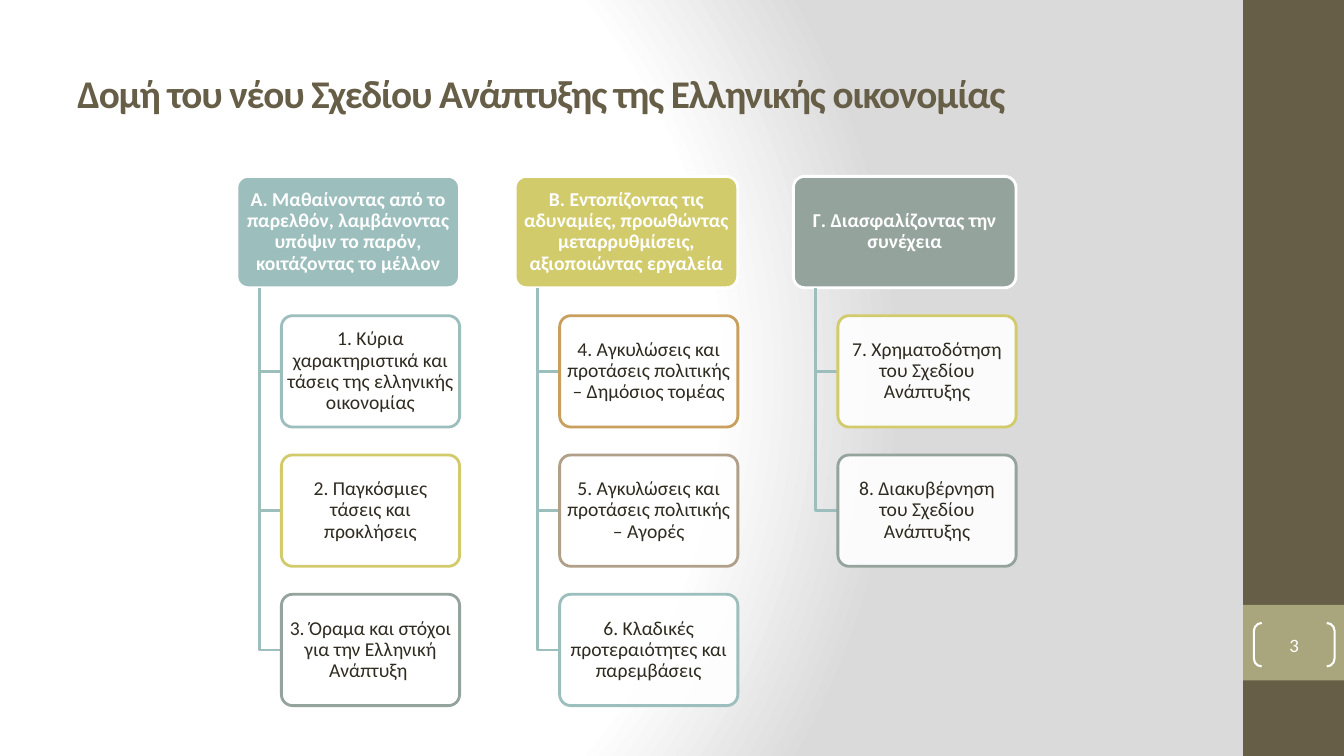
import pptx
import pptx.util
import pptx.oxml
import pptx.oxml.ns
from pptx.dml.color import RGBColor
from pptx.enum.shapes import MSO_SHAPE
from pptx.enum.text import MSO_ANCHOR, MSO_AUTO_SIZE, PP_ALIGN
from pptx.util import Pt

WHITE = RGBColor(0xFF, 0xFF, 0xFF)
INK = RGBColor(0x2F, 0x2B, 0x20)
BROWN = RGBColor(0x67, 0x5E, 0x47)
KHAKI = RGBColor(0xA9, 0xA5, 0x7C)
TEAL = RGBColor(0x9C, 0xBE, 0xBD)
LIME = RGBColor(0xD2, 0xCB, 0x6C)
SAGE = RGBColor(0x95, 0xA3, 0x9D)
OCHRE = RGBColor(0xC8, 0x9F, 0x5D)
TAUPE = RGBColor(0xB1, 0xA0, 0x89)

# Card grid, in points
LEFT, TOP = 169.2, 126
COL_STEP, ROW_STEP = 198.75, 99.5
HEAD_W, CARD_W, CARD_H = 159, 127.3, 79.5
TRUNK_DX, CARD_DX = 15.9, 31.8

COLUMNS = [
    ("Α. Μαθαίνοντας από το παρελθόν, λαμβάνοντας υπόψιν το παρόν, "
     "κοιτάζοντας το μέλλον", TEAL, [
         ("1. Κύρια χαρακτηριστικά και τάσεις της ελληνικής οικονομίας", TEAL),
         ("2. Παγκόσμιες τάσεις και προκλήσεις", LIME),
         ("3. Όραμα και στόχοι για την Ελληνική Ανάπτυξη ", SAGE)]),
    ("Β. Εντοπίζοντας τις αδυναμίες, προωθώντας μεταρρυθμίσεις, "
     "αξιοποιώντας εργαλεία", LIME, [
         ("4. Αγκυλώσεις και προτάσεις πολιτικής – Δημόσιος τομέας", OCHRE),
         ("5. Αγκυλώσεις και προτάσεις πολιτικής – Αγορές", TAUPE),
         ("6. Κλαδικές προτεραιότητες και παρεμβάσεις", TEAL)]),
    ("Γ. Διασφαλίζοντας την συνέχεια", SAGE, [
        ("7. Χρηματοδότηση του Σχεδίου Ανάπτυξης", LIME),
        ("8. Διακυβέρνηση του Σχεδίου Ανάπτυξης", SAGE)]),
]


class Deck:
    font = "Calibri"
    line_width = 2

    def __init__(self, prs):
        self.s = prs.slides.add_slide(prs.slide_layouts[5])

    def background(self):
        fill = self.s.background.fill
        fill.solid()
        solid = self.s.element.xpath(".//p:bgPr/a:solidFill")[0]
        stops = "".join(
            f'<a:gs pos="{pos}"><a:srgbClr val="{color}"/></a:gs>'
            for pos, color in ((0, "FFFFFF"), (75000, "FFFFFF"), (100000, "DADADA")))
        grad = pptx.oxml.parse_xml(
            f'<a:gradFill {pptx.oxml.ns.nsdecls("a")} rotWithShape="1">'
            f'<a:gsLst>{stops}</a:gsLst><a:path path="circle">'
            '<a:fillToRect l="20000" t="50000" r="100000" b="50000"/>'
            '</a:path></a:gradFill>')
        solid.getparent().replace(solid, grad)

    def style_text(self, tf, text, size, color, bold=False, align=PP_ALIGN.CENTER):
        tf.text = text
        tf.word_wrap = True
        tf.auto_size = MSO_AUTO_SIZE.NONE
        tf.vertical_anchor = MSO_ANCHOR.MIDDLE
        p = tf.paragraphs[0]
        p.alignment = align
        p.font.name, p.font.size, p.font.bold = self.font, Pt(size), bold
        p.font.color.rgb = color
        return p

    def title(self, text, x, y, w, h):
        sp = self.s.shapes.title
        sp.left, sp.top, sp.width, sp.height = Pt(x), Pt(y), Pt(w), Pt(h)
        p = self.style_text(sp.text_frame, text, 28, BROWN, True, PP_ALIGN.LEFT)
        p.runs[0].font._element.set("spc", "-80")

    def shape(self, kind, x, y, w, h, fill=None, line=None, width=line_width):
        sp = self.s.shapes.add_shape(kind, Pt(x), Pt(y), Pt(w), Pt(h))
        sp.shadow.inherit = False
        self.paint(sp, fill, line, width)
        return sp

    def paint(self, sp, fill, line, width):
        if fill is None:
            sp.fill.background()
        else:
            sp.fill.solid()
            sp.fill.fore_color.rgb = fill
        if line is None:
            sp.line.fill.background()
        else:
            sp.line.color.rgb = line
            sp.line.width = Pt(width)

    def card(self, text, x, y, w, fill, line, color, bold=False):
        sp = self.shape(MSO_SHAPE.ROUNDED_RECTANGLE, x, y, w, CARD_H, fill, line)
        sp.adjustments[0] = 0.1
        tf = sp.text_frame
        tf.margin_left = tf.margin_right = Pt(2.1)
        tf.margin_top = tf.margin_bottom = Pt(1.4)
        self.style_text(tf, text, 14, color, bold).line_spacing = 0.9
        return sp

    def translucent(self, sp, percent):
        clr = sp._element.spPr.xpath("a:solidFill/a:srgbClr")[0]
        alpha = pptx.oxml.parse_xml(
            f'<a:alpha {pptx.oxml.ns.nsdecls("a")} val="{percent * 1000}"/>')
        clr.append(alpha)

    def branch(self, x, y, x2, y2):
        fb = self.s.shapes.build_freeform(Pt(x), Pt(y))
        fb.add_line_segments([(Pt(x), Pt(y2)), (Pt(x2), Pt(y2))], close=False)
        sp = fb.convert_to_shape()
        sp.shadow.inherit = False
        self.paint(sp, None, TEAL, self.line_width)

    def page_number(self, text, x, y, w, h):
        sp = self.shape(MSO_SHAPE.DOUBLE_BRACKET, x, y, w, h, line=WHITE, width=1.5)
        sp.adjustments[0] = 0.18
        tf = sp.text_frame
        tf.margin_left = tf.margin_right = tf.margin_top = tf.margin_bottom = 0
        self.style_text(tf, text, 13.5, WHITE)


def main():
    prs = pptx.Presentation()
    prs.slide_width, prs.slide_height = Pt(960), Pt(540)
    deck = Deck(prs)

    # Background, side band and title
    deck.background()
    deck.shape(MSO_SHAPE.RECTANGLE, 888, 0, 72, 540, BROWN)
    deck.shape(MSO_SHAPE.RECTANGLE, 888, 432, 72, 54, KHAKI)
    deck.title("Δομή του νέου Σχεδίου Ανάπτυξης της Ελληνικής οικονομίας",
               48, 21.6, 800, 90)

    # Three columns: a header with its branches and cards
    for col, (heading, color, cards) in enumerate(COLUMNS):
        x = LEFT + col * COL_STEP
        deck.card(heading, x, TOP, HEAD_W, color, WHITE, WHITE, True)
        for row, (text, outline) in enumerate(cards, 1):
            y = TOP + row * ROW_STEP
            deck.branch(x + TRUNK_DX, TOP + CARD_H, x + CARD_DX, y + CARD_H / 2)
            sp = deck.card(text, x + CARD_DX, y, CARD_W, WHITE, outline, INK)
            deck.translucent(sp, 90)

    # Page number
    deck.page_number("3", 895.7, 445, 57.6, 31)

    prs.save("out.pptx")


if __name__ == "__main__":
    main()
